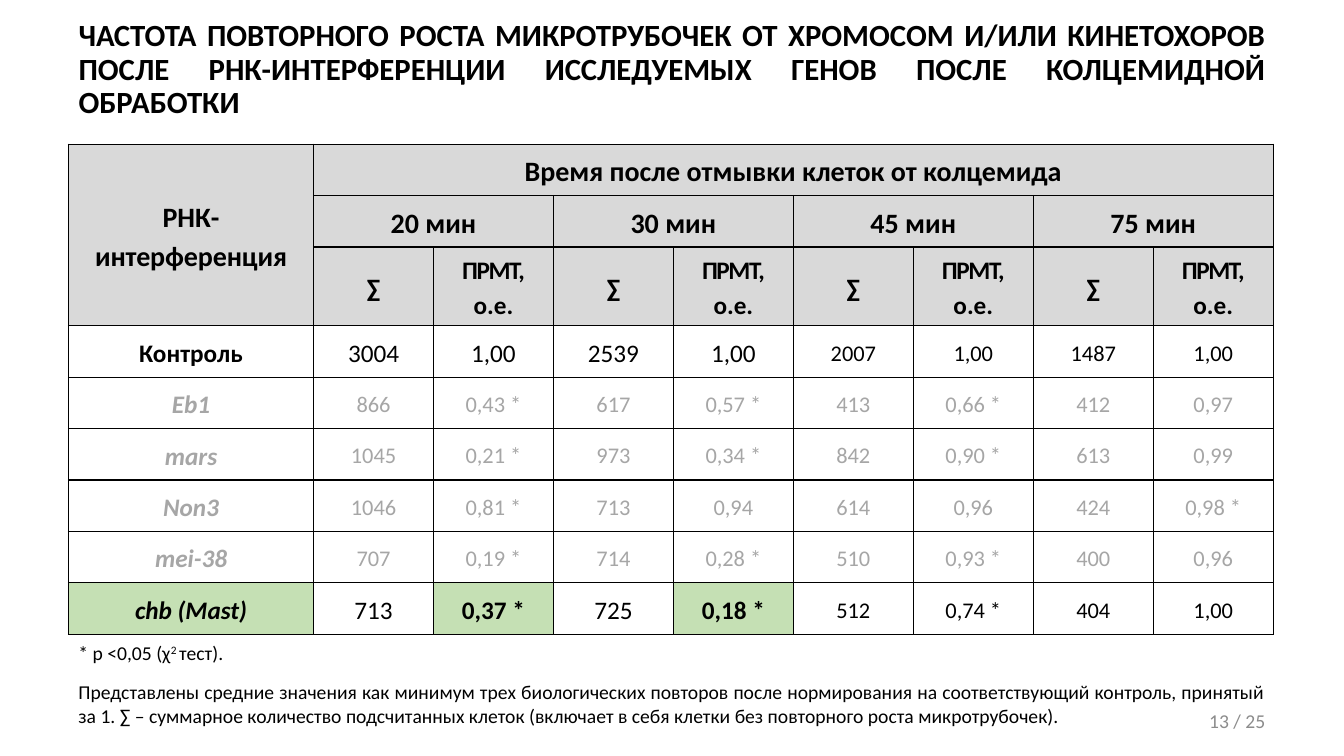
from lxml import etree
from pptx import Presentation
from pptx.dml.color import RGBColor
from pptx.enum.text import MSO_ANCHOR, MSO_AUTO_SIZE, PP_ALIGN
from pptx.oxml.ns import qn
from pptx.util import Emu, Pt

MID, TOP = MSO_ANCHOR.MIDDLE, MSO_ANCHOR.TOP
MIDDLE, RIGHT, JUST = PP_ALIGN.CENTER, PP_ALIGN.RIGHT, PP_ALIGN.JUSTIFY
FIT, FIXED = MSO_AUTO_SIZE.SHAPE_TO_FIT_TEXT, MSO_AUTO_SIZE.NONE
BLACK = RGBColor(0x00, 0x00, 0x00)
WHITE = RGBColor(0xFF, 0xFF, 0xFF)
HEAD = RGBColor(0xD9, 0xD9, 0xD9)
GREEN = RGBColor(0xC5, 0xE0, 0xB4)
PALE = RGBColor(0xA6, 0xA6, 0xA6)
GRAY = RGBColor(0x8C, 0x8C, 0x8C)
PX = 9144


def write(para, text, size=14, color=BLACK, bold=False, italic=False, **extra):
    run = para.add_run()
    run.text = text
    font = run.font
    font.name, font.size = "Calibri", Pt(size)
    font.bold, font.italic = bold, italic
    font.color.rgb = color
    for name, value in extra.items():
        run._r.get_or_add_rPr().set(name, str(value))


def fill_cell(cell, fill, *runs, **style):
    cell.fill.solid()
    cell.fill.fore_color.rgb = fill
    cell.vertical_anchor = MID
    cell.margin_left = cell.margin_right = Emu(7 * PX)
    cell.margin_top = cell.margin_bottom = 0
    para = cell.text_frame.paragraphs[0]
    para.alignment = MIDDLE
    para.line_spacing = 1.15
    para.space_after = Pt(10)
    for text, spc in runs:
        if text == "\n":
            para.add_line_break()
        else:
            write(para, text, spc=spc, **style)


deck = Presentation()
deck.slide_width, deck.slide_height = Emu(1333 * PX), Emu(750 * PX)
slide = deck.slides.add_slide(deck.slide_layouts[5])

title = slide.shapes.title
title.left, title.top, title.width, title.height = [Emu(n * PX) for n in (68, 30, 1197, 79)]
frame = title.text_frame
frame.word_wrap = True
frame.auto_size = FIXED
frame.vertical_anchor = MID
para = frame.paragraphs[0]
para.alignment = JUST
para.line_spacing = 0.9
write(para, "ЧАСТОТА ПОВТОРНОГО РОСТА МИКРОТРУБОЧЕК ОТ ХРОМОСОМ И/ИЛИ КИНЕТОХОРОВ "
      "ПОСЛЕ РНК-ИНТЕРФЕРЕНЦИИ ИССЛЕДУЕМЫХ ГЕНОВ ПОСЛЕ КОЛЦЕМИДНОЙ ОБРАБОТКИ",
      size=22, bold=True)

times = ["20 мин", "30 мин", "45 мин", "75 мин"]
data = [
    ["Контроль", "3004", "1,00", "2539", "1,00", "2007", "1,00", "1487", "1,00"],
    ["Eb1", "866", "0,43 *", "617", "0,57 *", "413", "0,66 *", "412", "0,97"],
    ["mars", "1045", "0,21 *", "973", "0,34 *", "842", "0,90 *", "613", "0,99"],
    ["Non3", "1046", "0,81 *", "713", "0,94", "614", "0,96", "424", "0,98 *"],
    ["mei-38", "707", "0,19 *", "714", "0,28 *", "510", "0,93 *", "400", "0,96"],
    ["chb (Mast)", "713", "0,37 *", "725", "0,18 *", "512", "0,74 *", "404", "1,00"],
]
last = len(data) - 1

holder = slide.shapes.add_table(9, 9, *[Emu(n * PX) for n in (68, 143, 1197, 476)])
table = holder.table
table.first_row = table.horz_banding = False
for i, col in enumerate(table.columns):
    col.width = Emu((119 if i else 243) * PX)
for i, row in enumerate(table.rows):
    row.height = Emu((63 if i == 2 else 51) * PX)

for cell in table.iter_cells():
    props = cell._tc.get_or_add_tcPr()
    for side in ("a:lnL", "a:lnR", "a:lnT", "a:lnB"):
        line = etree.SubElement(props, qn(side), w=str(Pt(1)))
        paint = etree.SubElement(line, qn("a:solidFill"))
        etree.SubElement(paint, qn("a:srgbClr"), val=str(BLACK))

table.cell(0, 0).merge(table.cell(2, 0))
table.cell(0, 1).merge(table.cell(0, 8))
fill_cell(table.cell(0, 0), HEAD, ("РНК-", 0), ("\n", 0), ("интерференция", -10),
          size=20, bold=True)
fill_cell(table.cell(0, 1), HEAD, ("Время после отмывки клеток от колцемида", 0),
          size=20, bold=True)
for i, time in enumerate(times):
    c = 1 + 2 * i
    table.cell(1, c).merge(table.cell(1, c + 1))
    fill_cell(table.cell(1, c), HEAD, (time, 0), size=20, bold=True)
    fill_cell(table.cell(2, c), HEAD, ("∑", 0), size=18, bold=True)
    fill_cell(table.cell(2, c + 1), HEAD, ("ПРМТ,", -100), (" о.е.", 0),
              size=18, bold=True)

for r, row in enumerate(data):
    main = r in (0, last)
    for c, text in enumerate(row):
        mark = r == last and c in (0, 2, 4)
        fill_cell(table.cell(r + 3, c), GREEN if mark else WHITE, (text, 0),
                  size=18 if c == 0 or main and c < 5 else 16,
                  color=BLACK if main else PALE,
                  bold=c == 0 or mark, italic=c == 0 and r > 0)

notes = [
    ((68, 631, 166, 34), False, FIT, TOP, JUST, BLACK,
     [("* p <0,05 (χ", 0), ("2 ", 30000), ("тест).", 0)]),
    ((68, 670, 1197, 57), True, FIT, TOP, JUST, BLACK,
     [("Представлены средние значения как минимум трех биологических повторов после "
       "нормирования на соответствующий контроль, принятый за 1. ∑ – суммарное количество "
       "подсчитанных клеток (включает в себя клетки без повторного роста микротрубочек).", 0)]),
    ((965, 695, 300, 40), True, FIXED, MID, RIGHT, GRAY, [("13 / 25", 0)]),
]
for place, wrap, size, anchor, align, color, runs in notes:
    box = slide.shapes.add_textbox(*[Emu(n * PX) for n in place])
    frame = box.text_frame
    frame.word_wrap = wrap
    frame.auto_size = size
    frame.vertical_anchor = anchor
    para = frame.paragraphs[0]
    para.alignment = align
    for text, rise in runs:
        write(para, text, color=color, baseline=rise)

deck.save("out.pptx")
